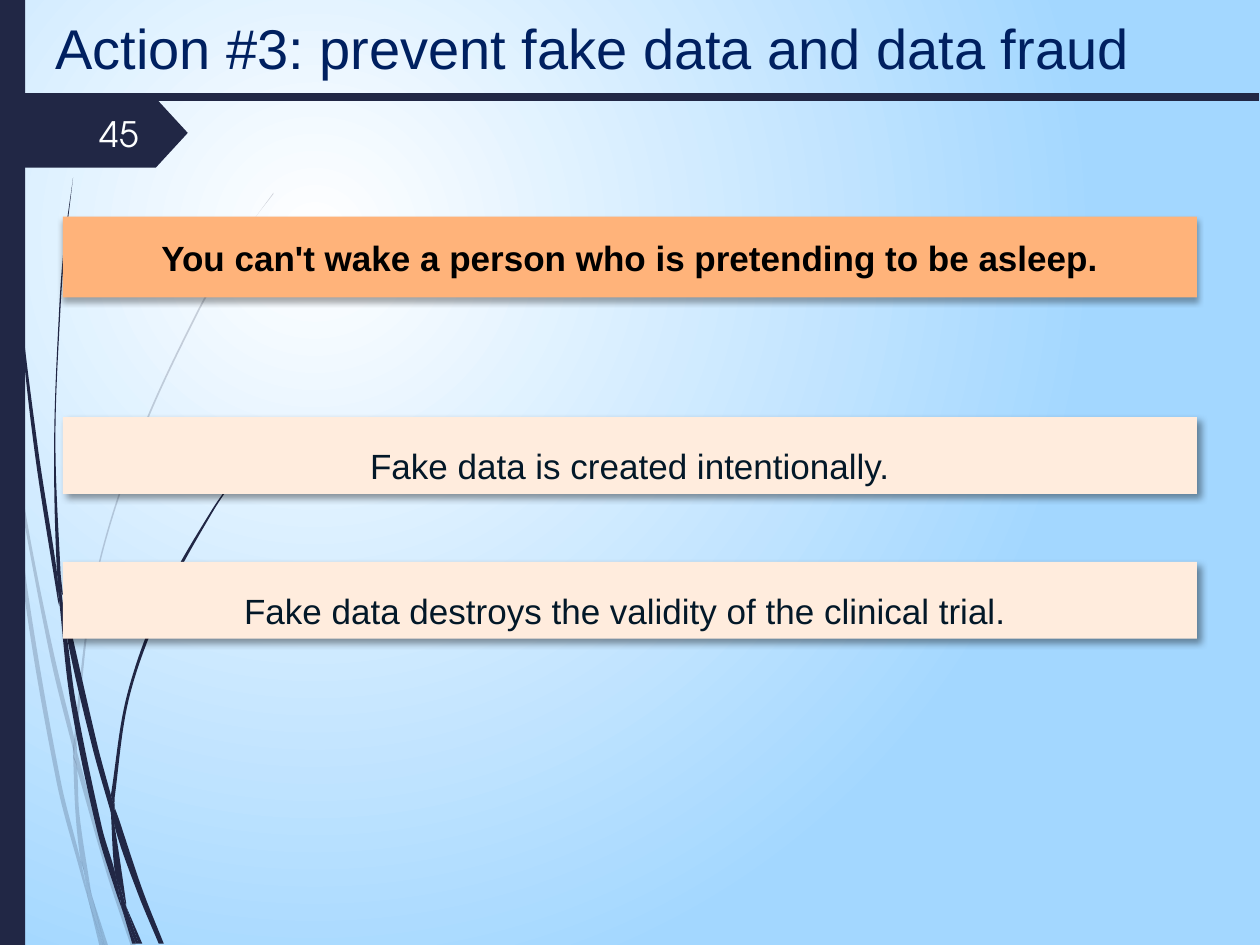
from dataclasses import dataclass
from math import dist

from pptx import Presentation
from pptx.dml.color import RGBColor
from pptx.enum.shapes import MSO_CONNECTOR, MSO_SHAPE
from pptx.enum.text import MSO_ANCHOR as Anchor, PP_ALIGN as Align
from pptx.oxml import parse_xml
from pptx.oxml.ns import nsdecls, qn
from pptx.util import Inches, Pt

COLORS = {
    "navy": "212745", "sky": "A3D7FF", "white": "FFFFFF", "number": "FEFFFF",
    "title": "002060", "orange": "FFB37A", "cream": "FFECDD",
    "black": "000000", "ink": "031828",
}
Point = tuple[float, float]


@dataclass
class Wisp:
    left: list[Point]
    right: list[Point]


@dataclass
class Shadow:
    alpha: int
    blur: float
    distance: float
    angle: int


@dataclass
class Label:
    text: str
    size: int
    color: str
    font: str = "Arial"
    align: Align = Align.LEFT
    bold: bool = False
    line_spacing: float = 1.0
    space_before: int = 0


@dataclass
class Banner:
    top: float
    height: float
    fill: str
    shadow: Shadow
    label: Label


FAINT_WISPS = [
    Wisp([(0, 2.99), (0.07, 3.44), (0.08, 3.5)], [(0, 2.82), (0.06, 3.22), (0.08, 3.5)]),
    Wisp([(0.12, 3.76), (0.4, 5.22), (0.59, 5.99)], [(0.1, 3.45), (0.25, 4.33), (0.43, 5.2), (0.59, 5.86)]),
    Wisp([(0.61, 6.1), (0.85, 6.94), (1.04, 7.51)],
         [(0.61, 5.96), (0.64, 6.07), (0.88, 6.92), (1.08, 7.51)]),
    Wisp([(0.73, 7.11), (0.83, 7.51)], [(0.73, 7.11), (0.86, 7.51)]),
    Wisp([(0.08, 3.5), (0.19, 4.7), (0.45, 6.21), (0.64, 6.93), (0.7, 7.14)],
         [(0.08, 3.5), (0.12, 3.76), (0.22, 4.69), (0.48, 6.19), (0.64, 6.83), (0.69, 7.07),
          (0.7, 7.14)]),
    Wisp([(0.58, 5.99), (0.6, 6.46), (0.64, 6.83), (0.67, 6.92), (0.73, 7.11)],
         [(0.58, 5.99), (0.61, 6.08), (0.63, 6.46), (0.72, 7.06), (0.73, 7.11)]),
    Wisp([(2.17, 1.53), (2.01, 1.75), (1.86, 1.97), (1.58, 2.44), (1.1, 3.48), (0.75, 4.61),
          (0.59, 5.84), (0.61, 5.96)],
         [(2.17, 1.54), (2.01, 1.75), (1.87, 1.98), (1.59, 2.45), (1.11, 3.49), (0.76, 4.62),
          (0.61, 5.84), (0.61, 5.96)]),
    Wisp([(0.7, 7.14), (0.79, 7.51)], [(0.7, 7.14), (0.82, 7.51)]),
    Wisp([(0.59, 5.86), (0.58, 5.99), (0.61, 6.08)], [(0.59, 5.86), (0.61, 5.96), (0.61, 6.1)]),
    Wisp([(0.65, 6.83), (0.69, 7.07), (0.7, 7.14), (0.82, 7.51)],
         [(0.65, 6.83), (0.67, 6.92), (0.73, 7.11), (0.83, 7.51)]),
]
DARK_WISPS = [
    Wisp([(0.02, 0), (0.03, 0.48), (0.05, 1.1), (0.14, 2.33), (0.27, 3.55), (0.46, 4.77),
          (0.47, 4.81)],
         [(0.03, 0), (0.04, 0.48), (0.06, 1.09), (0.15, 2.32), (0.3, 3.55), (0.45, 4.53),
          (0.47, 4.81)]),
    Wisp([(0.5, 4.72), (0.53, 5.05), (0.73, 5.92), (0.88, 6.45)],
         [(0.5, 4.72), (0.77, 5.9), (0.88, 6.31)]),
    Wisp([(0.91, 6.41), (0.91, 6.56), (1.09, 7.08), (1.26, 7.49)],
         [(0.91, 6.41), (0.94, 6.49), (1.13, 7.06), (1.3, 7.49)]),
    Wisp([(0.47, 4.77), (0.56, 5.57), (0.77, 6.59), (0.92, 7.08), (0.97, 7.22)],
         [(0.47, 4.77), (0.53, 5.05), (0.6, 5.56), (0.81, 6.57), (0.91, 6.91), (0.96, 7.17),
          (0.97, 7.22)]),
    Wisp([(0.58, 1.41), (0.51, 1.93), (0.47, 2.45), (0.43, 3.49), (0.45, 4.49), (0.49, 4.72)],
         [(0.58, 1.41), (0.52, 1.93), (0.48, 2.45), (0.44, 3.49), (0.48, 4.53), (0.5, 4.72)]),
    Wisp([(1, 7.19), (1.1, 7.49)], [(1, 7.19), (1.13, 7.49)]),
    Wisp([(0.45, 4.49), (0.47, 4.77), (0.53, 5.05)], [(0.45, 4.49), (0.49, 4.72), (0.53, 5.05)]),
    Wisp([(2.15, 3.44), (2.03, 3.58), (1.91, 3.73), (1.68, 4.05), (1.29, 4.74), (1.01, 5.51),
          (0.88, 6.31)],
         [(2.16, 3.44), (2.03, 3.59), (1.91, 3.74), (1.69, 4.06), (1.31, 4.76), (1.03, 5.52),
          (0.91, 6.33), (0.91, 6.41)]),
    Wisp([(0.97, 7.22), (1.05, 7.49)], [(0.97, 7.22), (1.08, 7.49)]),
    Wisp([(0.88, 6.45), (0.91, 6.91), (0.96, 7.06), (1, 7.19)],
         [(0.88, 6.45), (0.91, 6.56), (1, 7.16), (1, 7.19)]),
    Wisp([(0.88, 6.31), (0.88, 6.45), (0.91, 6.56)], [(0.88, 6.31), (0.91, 6.41), (0.91, 6.56)]),
    Wisp([(0.91, 6.91), (0.96, 7.17), (0.97, 7.22), (1.08, 7.49)],
         [(0.91, 6.91), (0.96, 7.06), (1, 7.19), (1.1, 7.49)]),
]
SOFT = Shadow(40, 4, 3, 45)
BANNERS = [
    Banner(1.72, 0.64, "orange", Shadow(32, 3.5, 2.2, 90),
           Label("You can't wake a person who is pretending to be asleep.", 20, "black",
                 align=Align.CENTER, bold=True)),
    *(Banner(top, 0.61, "cream", SOFT,
             Label(text, 20, "ink", align=Align.CENTER, line_spacing=1.5, space_before=6))
      for top, text in [(3.31, "Fake data is created intentionally."),
                        (4.46, "Fake data destroys the validity of the clinical trial. ")]),
]


def rgb(name: str) -> RGBColor:
    return RGBColor.from_string(COLORS[name])


def paint(shape, color: str) -> None:
    shape.shadow.inherit = False
    shape.fill.solid()
    shape.fill.fore_color.rgb = rgb(color)
    shape.line.fill.background()


def handle(knot: Point, before: Point, after: Point, reach: float) -> Point:
    span = dist(before, after) or 1
    return tuple(k + (a - b) / span * reach for k, b, a in zip(knot, before, after))


def bend(shape, corner: int) -> None:
    points = list(shape._element.spPr.iter(qn("a:pt")))
    knots = [(int(point.get("x")), int(point.get("y"))) for point in points]
    for edge in (range(corner), range(corner, len(knots))):
        first, last = edge[0], edge[-1]
        for i in range(first, last):
            start, end = knots[i], knots[i + 1]
            reach = dist(start, end) / 3
            controls = [handle(start, knots[max(i - 1, first)], end, reach),
                        handle(end, start, knots[min(i + 2, last)], -reach), end]
            marks = "".join(f'<a:pt x="{round(x)}" y="{round(y)}"/>' for x, y in controls)
            segment = points[i + 1].getparent()
            segment.getparent().replace(segment, parse_xml(
                f'<a:cubicBezTo {nsdecls("a")}>{marks}</a:cubicBezTo>'))


def draw_wisps(page, wisps: list[Wisp], opacity: int = 100) -> None:
    group = page.shapes.add_group_shape()
    for wisp in wisps:
        outline = [(Inches(x), Inches(y)) for x, y in wisp.left + wisp.right[::-1]]
        builder = group.shapes.build_freeform(*outline[0])
        builder.add_line_segments(outline[1:], close=True)
        shape = builder.convert_to_shape()
        bend(shape, len(wisp.left))
        paint(shape, "navy")
        if opacity < 100:
            color = next(shape._element.spPr.iter(qn("a:srgbClr")))
            color.append(parse_xml(f'<a:alpha {nsdecls("a")} val="{opacity * 1000}"/>'))


def add_block(page, kind: MSO_SHAPE, left: float, top: float, width: float, height: float, color: str):
    shape = page.shapes.add_shape(kind, Inches(left), Inches(top), Inches(width), Inches(height))
    paint(shape, color)
    return shape


def write(shape, label: Label) -> None:
    frame = shape.text_frame
    frame.word_wrap, frame.vertical_anchor = True, Anchor.MIDDLE
    para = frame.paragraphs[0]
    para.text, para.alignment = label.text, label.align
    para.line_spacing, para.space_before = label.line_spacing, Pt(label.space_before)
    para.font.name, para.font.size = label.font, Pt(label.size)
    para.font.bold, para.font.color.rgb = label.bold, rgb(label.color)


def add_text(page, left: float, top: float, width: float, height: float, label: Label) -> None:
    write(page.shapes.add_textbox(Inches(left), Inches(top), Inches(width), Inches(height)), label)


def add_banner(page, banner: Banner) -> None:
    box = add_block(page, MSO_SHAPE.RECTANGLE, 0.5, banner.top, 9, banner.height, banner.fill)
    cast = banner.shadow
    box._element.spPr.find(qn("a:effectLst")).append(parse_xml(
        f'<a:outerShdw {nsdecls("a")} blurRad="{Pt(cast.blur)}" dist="{Pt(cast.distance)}" '
        f'dir="{cast.angle * 60000}" rotWithShape="0"><a:srgbClr val="{COLORS["black"]}">'
        f'<a:alpha val="{cast.alpha * 1000}"/></a:srgbClr></a:outerShdw>'))
    write(box, banner.label)


def set_background(page) -> None:
    fill = page.background.fill
    fill.gradient()
    for stop, color in zip(fill.gradient_stops, ("white", "sky")):
        stop.color.rgb = rgb(color)
    gradient = next(page._element.iter(qn("a:gradFill")))
    gradient.replace(gradient.find(qn("a:lin")), parse_xml(
        f'<a:path {nsdecls("a")} path="circle">'
        '<a:fillToRect l="50000" t="50000" r="100000" b="100000"/></a:path>'))


deck = Presentation()
deck.slide_width, deck.slide_height = Inches(10), Inches(7.5)
page = deck.slides.add_slide(deck.slide_layouts[6])
set_background(page)
draw_wisps(page, FAINT_WISPS, opacity=20)
draw_wisps(page, DARK_WISPS)
add_block(page, MSO_SHAPE.RECTANGLE, 0, 0, 0.2, 7.5, "navy")
add_block(page, MSO_SHAPE.PENTAGON, 0, 0.78, 1.49, 0.55, "navy").adjustments[0] = 0.46
add_text(page, 0.56, 0.86, 0.64, 0.4,
         Label("45", 20, "number", font="TeX Gyre Adventor", align=Align.RIGHT))
add_text(page, 0.34, 0.05, 9.53, 0.64, Label("Action #3: prevent fake data and data fraud", 32, "title"))
rule = page.shapes.add_connector(
    MSO_CONNECTOR.STRAIGHT, Inches(0.09), Inches(0.77), Inches(9.99), Inches(0.77))
rule.line.color.rgb, rule.line.width = rgb("navy"), Pt(4.5)
rule._element.spPr.append(parse_xml(f'<a:effectLst {nsdecls("a")}/>'))
for banner in BANNERS:
    add_banner(page, banner)
deck.save("out.pptx")
